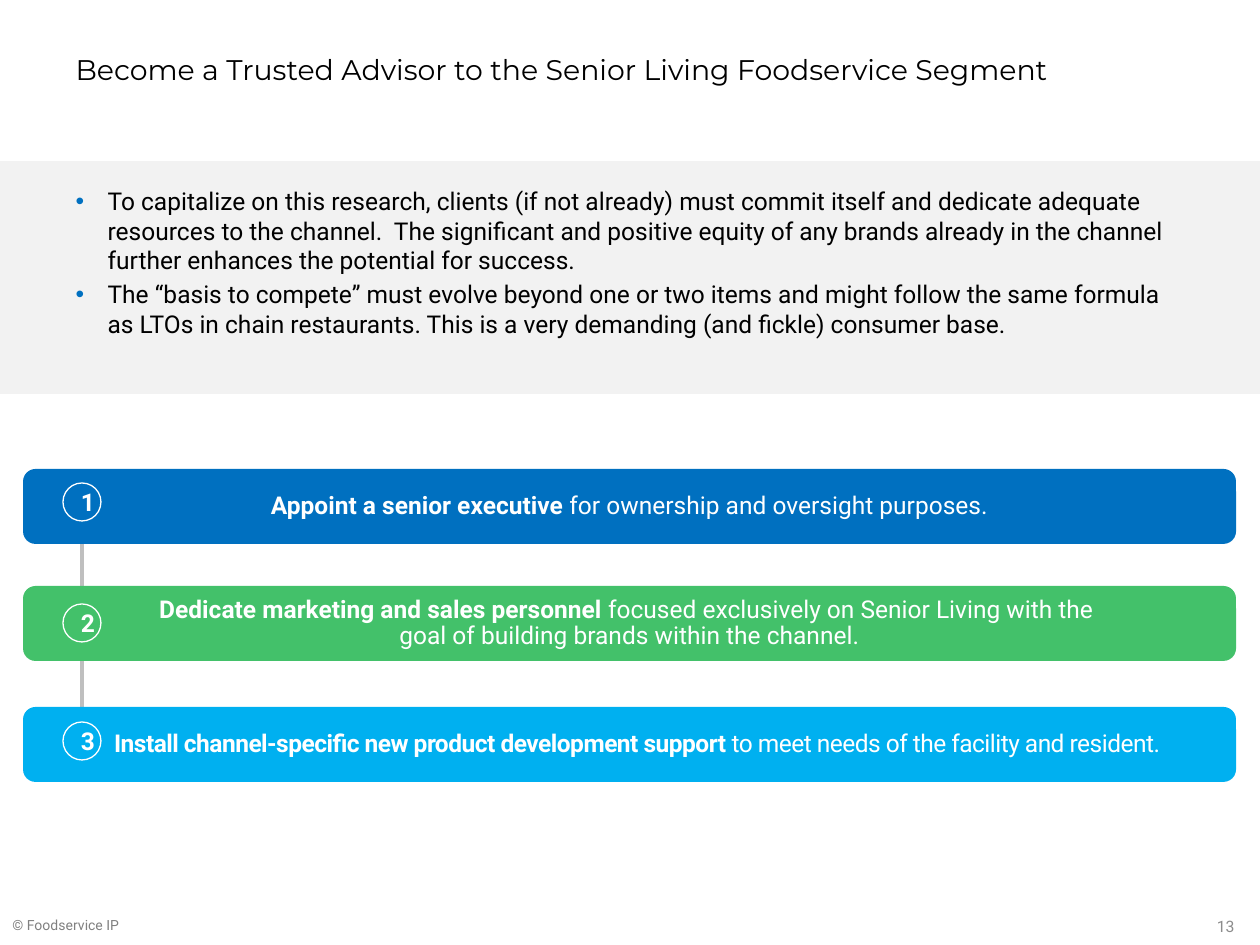
from lxml import etree
from pptx import Presentation, util as u
from pptx.dml.color import RGBColor
from pptx.enum import shapes, text
from pptx.oxml.ns import qn

BLACK = RGBColor(0x00, 0x00, 0x00)
WHITE = RGBColor(0xFF, 0xFF, 0xFF)
BLUE = RGBColor(0x00, 0x70, 0xC0)
GREEN = RGBColor(0x43, 0xC1, 0x6A)
SKY = RGBColor(0x00, 0xB0, 0xF0)
PANEL = RGBColor(0xF2, 0xF2, 0xF2)
RAIL = RGBColor(0xBF, 0xBF, 0xBF)
COPYRIGHT_GREY = RGBColor(0x80, 0x80, 0x80)
NUMBER_GREY = RGBColor(0x8C, 0x8C, 0x8C)

TITLE = "Become a Trusted Advisor to the Senior Living Foodservice Segment"
BULLETS = [
    "To capitalize on this research, clients (if not already) must commit itself and "
    "dedicate adequate resources to the channel.  The significant and positive equity of "
    "any brands already in the channel further enhances the potential for success.",
    "The “basis to compete” must evolve beyond one or two items and might follow the "
    "same formula as LTOs in chain restaurants. This is a very demanding (and fickle) "
    "consumer base.",
]
STEPS = [
    dict(color=BLUE, bar_y=469, badge_y=483, lead="Appoint a senior executive ",
         lines=["for ownership and oversight purposes."]),
    dict(color=GREEN, bar_y=586, badge_y=604, lead="Dedicate marketing and sales personnel ",
         lines=["focused exclusively on Senior Living with the ",
                "goal of building brands within the channel."]),
    dict(color=SKY, bar_y=707, badge_y=722, spacing=-30, margin=54, indent=-39,
         lead="Install channel-specific new product development support ",
         lines=["to meet needs of the facility and resident."]),
]
COPYRIGHT = "© Foodservice IP"
PAGE = "13"


def px(n):
    return u.Emu(round(n * 914400 / 126))


def box(*sides):
    return [px(n) for n in sides]


def add_run(p, words, size, color, font="Roboto", bold=False, spacing=None):
    r = p.add_run()
    r.text = words
    r.font.name, r.font.size, r.font.bold = font, u.Pt(size), bold
    r.font.color.rgb = color
    if spacing:
        r.font._element.set("spc", str(spacing))


def set_indent(p, margin, indent):
    pPr = p._p.get_or_add_pPr()
    pPr.set("marL", str(px(margin)))
    pPr.set("indent", str(px(indent)))
    return pPr


def add_bullet(p, color):
    pPr = set_indent(p, 32, -32)
    clr = etree.SubElement(pPr, qn("a:buClr"))
    etree.SubElement(clr, qn("a:srgbClr")).set("val", str(color))
    etree.SubElement(pPr, qn("a:buFont")).set("typeface", "Arial")
    etree.SubElement(pPr, qn("a:buChar")).set("char", "•")


def place(sp, sides, anchor):
    sp.left, sp.top, sp.width, sp.height = box(*sides)
    tf = sp.text_frame
    tf.word_wrap = True
    tf.auto_size = text.MSO_AUTO_SIZE.NONE
    tf.vertical_anchor = anchor
    return tf


def add_shape(s, kind, sides, fill, line=None):
    sp = s.shapes.add_shape(kind, *box(*sides))
    sp.shadow.inherit = False
    sp.fill.solid()
    sp.fill.fore_color.rgb = fill
    if line is None:
        sp.line.fill.background()
    else:
        sp.line.color.rgb = line
        sp.line.width = u.Pt(0.75)
    tf = sp.text_frame
    tf.word_wrap = True
    tf.vertical_anchor = text.MSO_ANCHOR.MIDDLE
    tf.paragraphs[0].alignment = text.PP_ALIGN.CENTER
    return tf


def add_label(s, sides, words, size, color, anchor, align):
    tf = place(s.shapes.add_textbox(0, 0, 0, 0), sides, anchor)
    p = tf.paragraphs[0]
    p.alignment = align
    add_run(p, words, size, color)


def add_bar(s, step):
    tf = add_shape(s, shapes.MSO_SHAPE.ROUNDED_RECTANGLE, (23, step["bar_y"], 1213, 75),
                   step["color"])
    tf.margin_left = tf.margin_right = tf.margin_top = tf.margin_bottom = px(8)
    p = tf.paragraphs[0]
    p.line_spacing = 0.9
    if "margin" in step:
        set_indent(p, step["margin"], step["indent"])
    spacing = step.get("spacing")
    add_run(p, step["lead"], 14, WHITE, bold=True, spacing=spacing)
    for i, line in enumerate(step["lines"]):
        if i:
            p.add_line_break()
        add_run(p, line, 14, WHITE, spacing=spacing)


def main():
    prs = Presentation()
    prs.slide_width, prs.slide_height = box(1260, 945)
    s = prs.slides.add_slide(prs.slide_layouts[1])
    title, body = s.placeholders

    rail = s.shapes.add_connector(shapes.MSO_CONNECTOR.STRAIGHT, *box(82, 524, 82, 728))
    rail.line.color.rgb = RAIL
    rail.line.width = u.Pt(2)
    etree.SubElement(rail._element.spPr, qn("a:effectLst"))
    add_shape(s, shapes.MSO_SHAPE.RECTANGLE, (0, 161, 1260, 233), PANEL)
    for sp in (title, body):
        s.shapes._spTree.append(sp._element)

    p = place(title, (63, 38, 1134, 62), text.MSO_ANCHOR.MIDDLE).paragraphs[0]
    p.alignment = text.PP_ALIGN.LEFT
    add_run(p, TITLE, 16.2, BLACK, font="Montserrat")

    tf = place(body, (63, 180, 1134, 583), text.MSO_ANCHOR.TOP)
    for i, words in enumerate(BULLETS):
        p = tf.add_paragraph() if i else tf.paragraphs[0]
        add_bullet(p, BLUE)
        p.space_before = u.Pt(2.8 if i else 0)
        add_run(p, words, 14, BLACK)

    for step in STEPS:
        add_bar(s, step)
    for n, step in enumerate(STEPS, 1):
        tf = add_shape(s, shapes.MSO_SHAPE.OVAL, (63, step["badge_y"], 38, 38),
                       step["color"], WHITE)
        add_run(tf.paragraphs[0], str(n), 14, WHITE, bold=True)

    add_label(s, (0, 891, 290, 49), COPYRIGHT, 8, COPYRIGHT_GREY,
              text.MSO_ANCHOR.BOTTOM, text.PP_ALIGN.LEFT)
    add_label(s, (903, 901, 344, 50), PAGE, 9, NUMBER_GREY,
              text.MSO_ANCHOR.MIDDLE, text.PP_ALIGN.RIGHT)
    prs.save("out.pptx")


if __name__ == "__main__":
    main()
